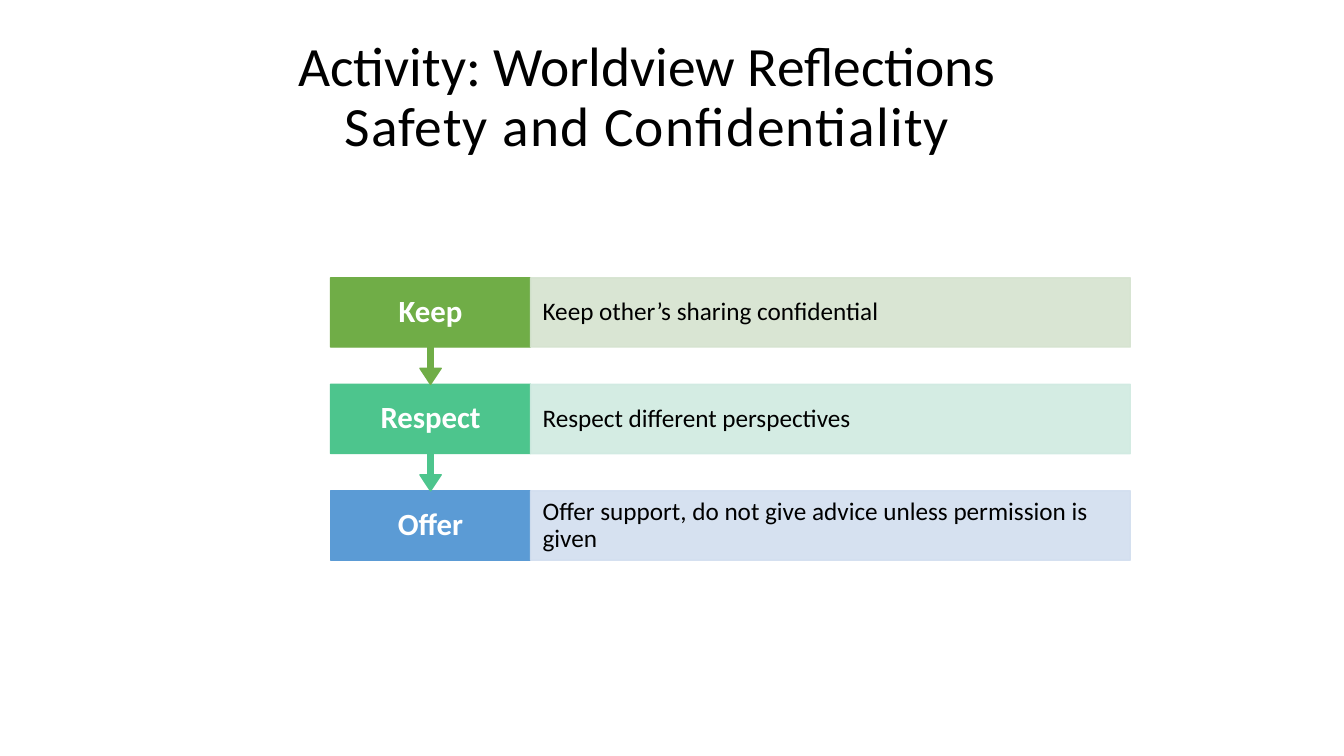
from dataclasses import dataclass

from lxml.etree import SubElement
from pptx import Presentation
from pptx.dml.color import RGBColor
from pptx.enum.shapes import MSO_SHAPE as Preset
from pptx.enum.text import MSO_ANCHOR as Anchor, MSO_AUTO_SIZE as AutoSize, PP_ALIGN as Align
from pptx.oxml.ns import qn
from pptx.shapes.autoshape import Shape
from pptx.slide import Slide
from pptx.util import Inches, Pt

COLORS = {
    "black": "000000", "white": "FFFFFF",
    "green": "70AD47", "pale green": "D5E3CF",
    "teal": "4DC58D", "pale teal": "D0EAE1",
    "blue": "5B9BD5", "pale blue": "D2DEEF",
}
FONT = "Calibri"
WIDTH, HEIGHT = Inches(13.33), Inches(7.5)

LABEL_LEFT, LABEL_WIDTH, DETAIL_WIDTH = 24.6, 14.87, 44.63
FIRST_TOP, ROW_PITCH, BOX_SHARE = 36.75, 14.09, 0.65
CALLOUT_ADJUSTMENTS = (0.05, 0.1, 0.15, BOX_SHARE)


@dataclass(frozen=True)
class Step:
    label: str
    detail: str
    color: str


STEPS = [
    Step("Keep", "Keep other’s sharing confidential", "green"),
    Step("Respect", "Respect different perspectives", "teal"),
    Step("Offer", "Offer support, do not give advice unless permission is given", "blue"),
]


def across(percent: float) -> int:
    return round(WIDTH * percent / 100)


def down(percent: float) -> int:
    return round(HEIGHT * percent / 100)


def write(box: Shape, *lines: str, size: float, color: str = "black", bold: bool = False,
          align: Align = Align.LEFT, anchor: Anchor = Anchor.MIDDLE,
          inset: float = 0.1) -> None:
    frame = box.text_frame
    frame.word_wrap = True
    frame.auto_size = AutoSize.NONE
    frame.vertical_anchor = anchor
    frame.margin_left = frame.margin_right = Inches(inset)
    frame.margin_top = frame.margin_bottom = Inches(0.05)
    para = frame.paragraphs[0]
    para.alignment = align
    para.line_spacing = 0.9
    for index, line in enumerate(lines):
        if index:
            para.add_line_break()
        span = para.add_run()
        span.text = line
        span.font.name = FONT
        span.font.size = Pt(size)
        span.font.bold = bold
        span.font.color.rgb = RGBColor.from_string(COLORS[color])


def add_block(page: Slide, preset: Preset, left: float, top: float, width: float,
              height: float, color: str, opacity: int = 100) -> Shape:
    block = page.shapes.add_shape(preset, across(left), down(top), across(width), down(height))
    block.shadow.inherit = False
    block.line.width = Pt(1)
    for paint in (block.fill, block.line.fill):
        paint.solid()
        paint.fore_color.rgb = RGBColor.from_string(COLORS[color])
    if opacity < 100:
        for tint in block._element.spPr.iter(qn("a:srgbClr")):
            SubElement(tint, qn("a:alpha"), val=str(opacity * 1000))
    return block


def add_step(page: Slide, step: Step, row: int) -> None:
    top = FIRST_TOP + row * ROW_PITCH
    box_height = ROW_PITCH * BOX_SHARE
    if row == len(STEPS) - 1:
        label = add_block(page, Preset.RECTANGLE, LABEL_LEFT, top, LABEL_WIDTH,
                          box_height, step.color)
    else:
        label = add_block(page, Preset.DOWN_ARROW_CALLOUT, LABEL_LEFT, top, LABEL_WIDTH,
                          ROW_PITCH, step.color)
        for index, value in enumerate(CALLOUT_ADJUSTMENTS):
            label.adjustments[index] = value
    write(label, step.label, size=22, color="white", bold=True, align=Align.CENTER, inset=0.14)
    detail = add_block(page, Preset.RECTANGLE, LABEL_LEFT + LABEL_WIDTH, top, DETAIL_WIDTH,
                       box_height, f"pale {step.color}", opacity=90)
    write(detail, step.detail, size=18, inset=0.12)


def add_title(page: Slide) -> None:
    title = page.shapes.title
    title.left, title.top = across(4.5), down(3.87)
    title.width, title.height = across(87.32), down(17.73)
    write(title, "Activity: Worldview Reflections", "Safety and Confidentiality",
          size=39.6, align=Align.CENTER, anchor=Anchor.BOTTOM)
    subtitle = title.text_frame.paragraphs[0].runs[-1]
    subtitle.font._element.set("spc", "80")


def main() -> None:
    deck = Presentation()
    deck.slide_width, deck.slide_height = WIDTH, HEIGHT
    page = deck.slides.add_slide(deck.slide_layouts[5])
    add_title(page)
    for row, step in reversed(list(enumerate(STEPS))):
        add_step(page, step, row)
    deck.save("out.pptx")


if __name__ == "__main__":
    main()
